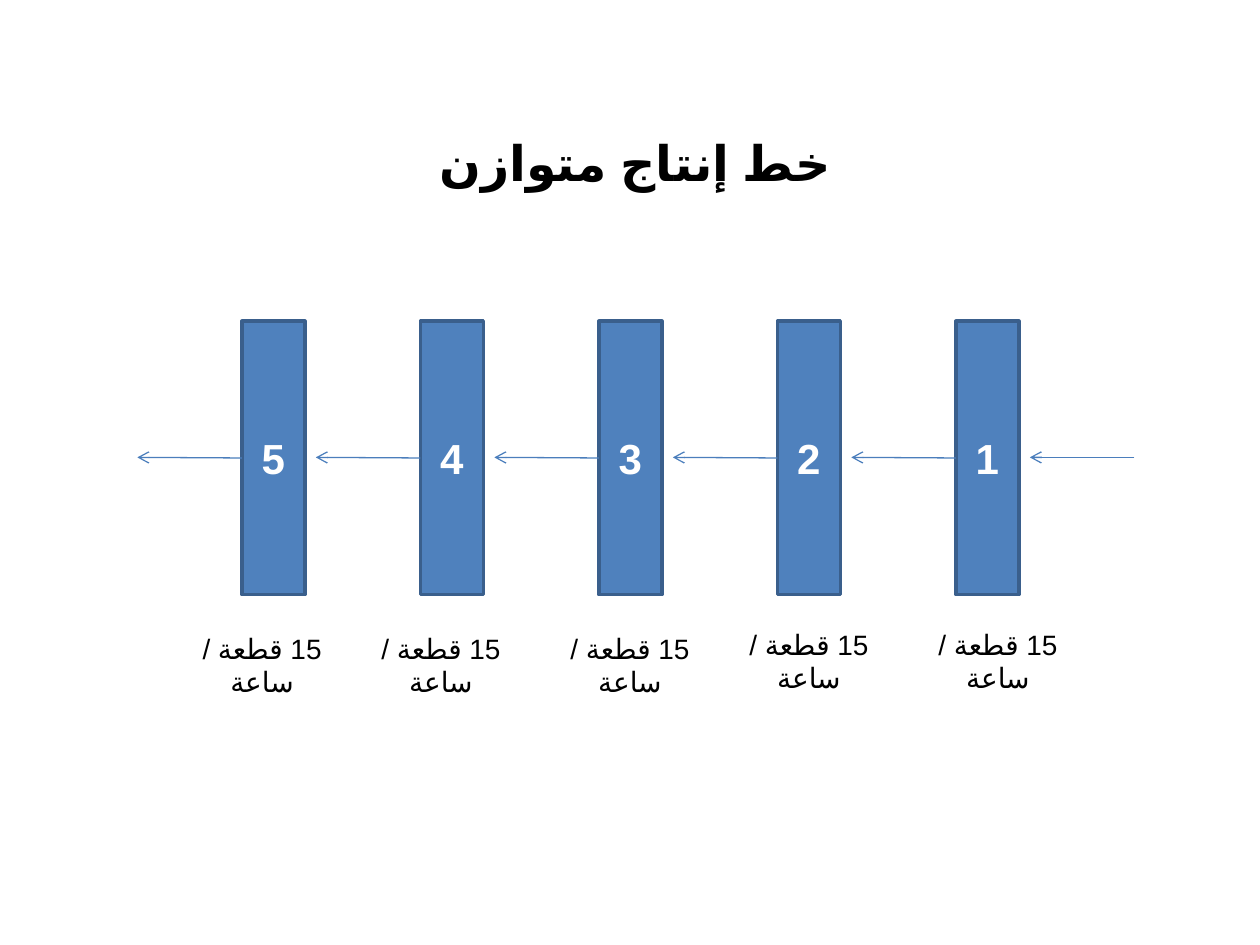
from pptx import Presentation
from pptx.dml.color import RGBColor
from pptx.enum import lang, shapes, text
from pptx.oxml import parse_xml
from pptx.oxml.ns import nsdecls
from pptx.util import Inches, Pt

BLUE = RGBColor(0x4F, 0x81, 0xBD)
EDGE = RGBColor(0x3A, 0x5F, 0x8C)
ARROW = RGBColor(0x4B, 0x7E, 0xBC)
WHITE = RGBColor(0xFF, 0xFF, 0xFF)
BLACK = RGBColor(0, 0, 0)

STATIONS = 5
PITCH = 17 / 12
STATION_W = 0.5
ARROW_LEN = 0.83
ARROW_DROP = 1.08  # from the top of the stations
RATE = "15 قطعة / ساعة"
# Left and top of each rate label, station 1 first
RATE_SPOTS = [(7.17, 4.93), (5.67, 4.93), (4.25, 4.96), (2.75, 4.96), (1.33, 4.96)]


def write(tf, words, size, color, bold=False):
    """Put one centred right-to-left paragraph into a text frame."""
    tf.word_wrap = True
    p = tf.paragraphs[0]
    p.alignment = text.PP_ALIGN.CENTER
    p._p.get_or_add_pPr().set("rtl", "1")
    r = p.add_run()
    r.text = words
    r.font.name = "Calibri"
    r.font.size = Pt(size)
    r.font.bold = bold
    r.font.color.rgb = color
    r.font.language_id = lang.MSO_LANGUAGE_ID.ARABIC_EGYPT
    r.font._element.append(parse_xml(f'<a:cs {nsdecls("a")} typeface="Arial"/>'))


def add_text(s, left, top, width, height, words, size, bold=False):
    sp = s.shapes.add_textbox(Inches(left), Inches(top), Inches(width), Inches(height))
    write(sp.text_frame, words, size, BLACK, bold)
    sp.text_frame.auto_size = text.MSO_AUTO_SIZE.SHAPE_TO_FIT_TEXT


def add_station(s, left, top, width, height, number):
    sp = s.shapes.add_shape(shapes.MSO_SHAPE.RECTANGLE, Inches(left), Inches(top),
                            Inches(width), Inches(height))
    sp.shadow.inherit = False
    sp.fill.solid()
    sp.fill.fore_color.rgb = BLUE
    sp.line.color.rgb = EDGE
    sp.line.width = Pt(2)
    sp.text_frame.vertical_anchor = text.MSO_ANCHOR.MIDDLE
    write(sp.text_frame, str(number), 24, WHITE, bold=True)
    return sp


def add_arrow(s, start, y, station=None):
    """Draw a leftward arrow, starting on the station's left side if given."""
    c = s.shapes.add_connector(shapes.MSO_CONNECTOR.STRAIGHT, Inches(start), Inches(y),
                               Inches(start - ARROW_LEN), Inches(y))
    if station is not None:
        c.begin_connect(station, 1)
    c.line.color.rgb = ARROW
    c.line.width = Pt(0.75)
    c.line._get_or_add_ln().append(
        parse_xml(f'<a:tailEnd {nsdecls("a")} type="arrow"/>'))
    c._element.spPr.append(parse_xml(f'<a:effectLst {nsdecls("a")}/>'))


def add_line(s, left, top, height):
    """Place the stations, numbered from right to left, and their flow arrows."""
    flow_y = top + ARROW_DROP
    add_arrow(s, left + STATIONS * PITCH, flow_y)
    for i in range(STATIONS):
        x = left + (STATIONS - 1 - i) * PITCH
        station = add_station(s, x, top, STATION_W, height, i + 1)
        add_arrow(s, x, flow_y, station)


def main():
    prs = Presentation()
    prs.slide_width, prs.slide_height = Inches(10), Inches(7.5)
    s = prs.slides.add_slide(prs.slide_layouts[6])
    add_line(s, 1.92, 2.55, 2.17)
    add_text(s, 2, 1, 6.08, 0.57, "خط إنتاج متوازن", 28, bold=True)
    for left, top in RATE_SPOTS:
        add_text(s, left, top, 1.5, 0.37, RATE, 16)
    prs.save("out.pptx")


if __name__ == "__main__":
    main()
